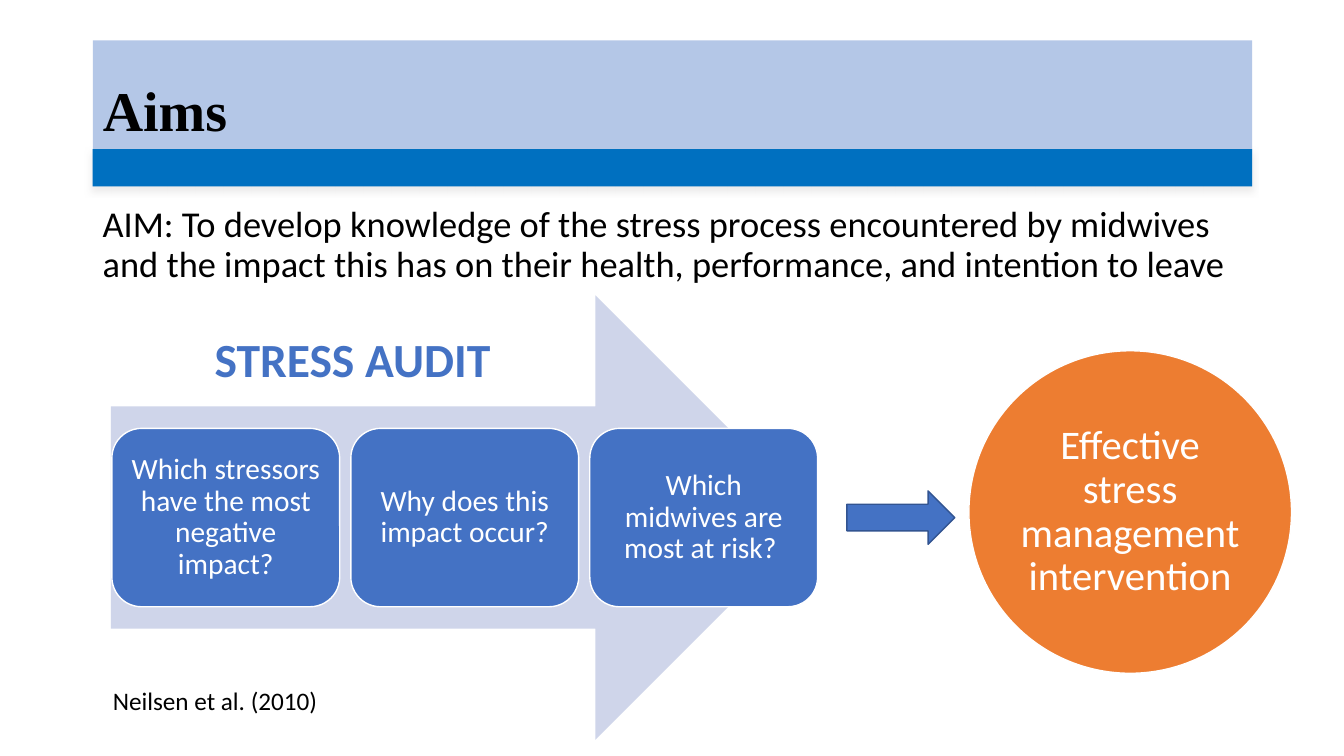
"""Build the Aims slide: a stress audit leading to an intervention."""
from lxml.etree import SubElement
from pptx import Presentation
from pptx.dml.color import RGBColor
from pptx.enum.shapes import MSO_SHAPE
from pptx.enum.text import MSO_ANCHOR, MSO_AUTO_SIZE, PP_ALIGN
from pptx.oxml.ns import qn
from pptx.util import Inches, Pt

TITLE = "Aims"
AIM = ("AIM: To develop knowledge of the stress process encountered by midwives "
       "and the impact this has on their health, performance, and intention to leave")
AUDIT = "STRESS AUDIT"
CARDS = [
    "Which stressors have the most negative impact?",
    "Why does this impact occur?",
    "Which midwives are most at risk? ",
]
GOAL = "Effective stress management intervention"
CITE = "Neilsen et al. (2010)"

BLUE, WHITE, BLACK = "4472C4", "FFFFFF", "000000"
LEFT, WIDE = 0.92, 11.5
CARD_X, CARD_W, STEP = 1.11, 2.26, 2.37


def color(code):
    return RGBColor.from_string(code)


def write(shape, text, size, code, font="Calibri", bold=False,
          align=PP_ALIGN.LEFT, anchor=MSO_ANCHOR.TOP, space=None, inset=None, wrap=True):
    frame = shape.text_frame
    frame.text = text
    frame.word_wrap = wrap
    frame.auto_size = MSO_AUTO_SIZE.NONE if wrap else MSO_AUTO_SIZE.SHAPE_TO_FIT_TEXT
    frame.vertical_anchor = anchor
    if inset is not None:
        frame.margin_left = frame.margin_right = Inches(inset)
        frame.margin_top = frame.margin_bottom = Inches(inset)
    para = frame.paragraphs[0]
    para.alignment = align
    if space:
        para.line_spacing = space
    face = para.runs[0].font
    face.name, face.size, face.bold = font, Pt(size), bold
    face.color.rgb = color(code)


def draw(slide, kind, box, fill, line=None):
    shape = slide.shapes.add_shape(kind, *map(Inches, box))
    shape.shadow.inherit = False
    shape.fill.solid()
    shape.fill.fore_color.rgb = color(fill)
    if line:
        shape.line.color.rgb = color(line)
        shape.line.width = Pt(1)
    else:
        shape.line.fill.background()
    return shape


def label(slide, box, *args, **style):
    write(slide.shapes.add_textbox(*map(Inches, box)), *args, **style)


def shade(shape):
    effects = shape._element.spPr.find(qn("a:effectLst"))
    outer = SubElement(effects, qn("a:outerShdw"), blurRad=str(Pt(5)),
                       dist=str(Pt(3)), dir=str(106 * 60000), rotWithShape="0")
    tint = SubElement(outer, qn("a:srgbClr"), val="E7E6E6")
    SubElement(tint, qn("a:alpha"), val="75000")


def main():
    deck = Presentation()
    deck.slide_width, deck.slide_height = Inches(13.33), Inches(7.5)
    slide = deck.slides.add_slide(deck.slide_layouts[5])

    title = slide.shapes.title
    title.left, title.top = Inches(LEFT), Inches(0.4)
    title.width, title.height = Inches(WIDE), Inches(1.45)
    title.fill.solid()
    title.fill.fore_color.rgb = color("B4C7E7")
    write(title, TITLE, 40, BLACK, font="Times New Roman", bold=True,
          anchor=MSO_ANCHOR.MIDDLE, space=0.9)

    label(slide, (LEFT, 2, WIDE, 0.9), AIM, 26, BLACK, space=0.9)
    shade(draw(slide, MSO_SHAPE.RECTANGLE, (LEFT, 1.48, WIDE, 0.37), "0070C0"))

    center = dict(align=PP_ALIGN.CENTER, anchor=MSO_ANCHOR.MIDDLE, space=0.9)
    draw(slide, MSO_SHAPE.RIGHT_ARROW, (1.1, 2.93, 7.01, 4.41), "CFD5EA")
    for i, text in enumerate(CARDS):
        box = (CARD_X + i * STEP, 4.25, CARD_W, 1.77)
        card = draw(slide, MSO_SHAPE.ROUNDED_RECTANGLE, box, BLUE, WHITE)
        write(card, text, 21, WHITE, inset=0.09, **center)

    label(slide, (2.03, 3.22, 2.97, 0.67), AUDIT, 34, BLUE, bold=True, wrap=False)
    goal = draw(slide, MSO_SHAPE.OVAL, (9.61, 3.48, 3.2, 3.2), "ED7D31", WHITE)
    write(goal, GOAL, 29, WHITE, inset=0.04, **center)
    draw(slide, MSO_SHAPE.RIGHT_ARROW, (8.4, 4.87, 1.07, 0.53), BLUE, "325491")
    label(slide, (1.02, 6.75, 2.32, 0.4), CITE, 18, BLACK, wrap=False)

    deck.save("out.pptx")


if __name__ == "__main__":
    main()
